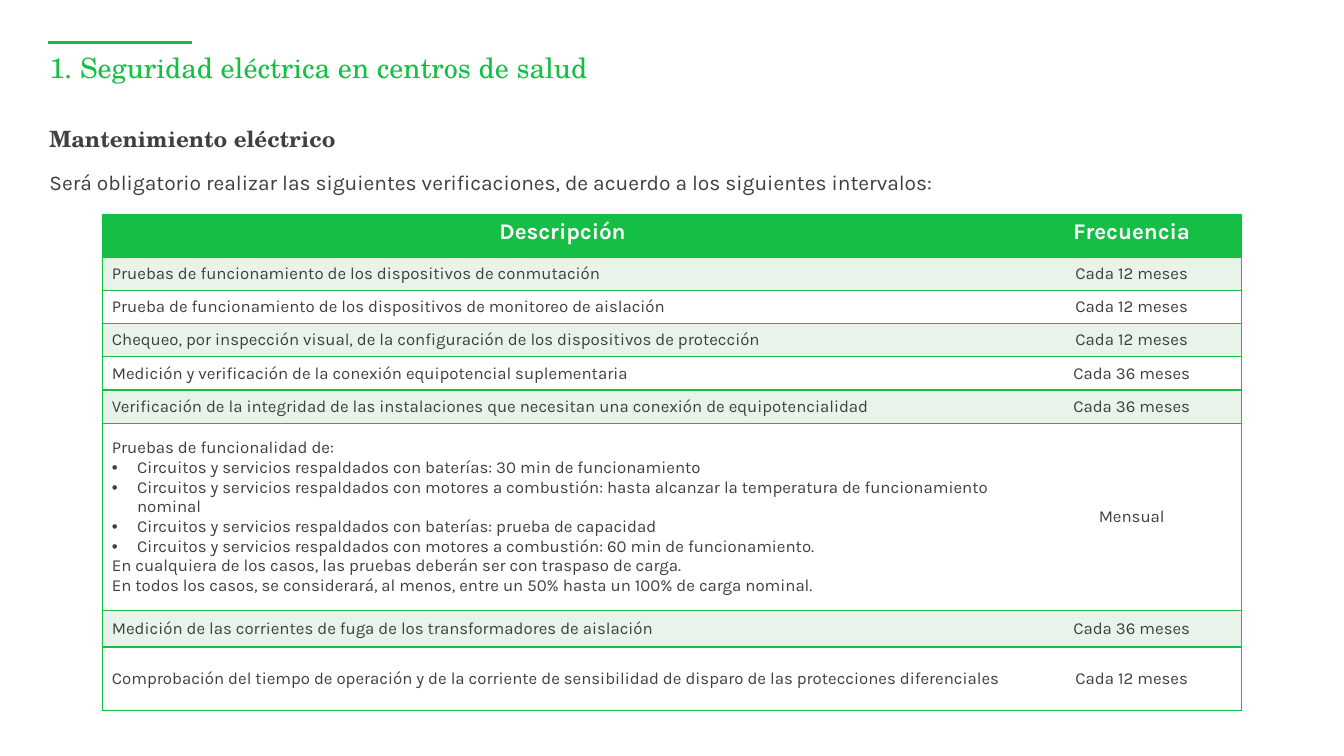
"""Build the slide on electrical maintenance checks and their intervals."""
from lxml.etree import SubElement as Sub
from pptx import Presentation
from pptx.dml.color import RGBColor as Rgb
from pptx.enum.shapes import MSO_CONNECTOR as Link
from pptx.enum.text import MSO_ANCHOR as Anchor, PP_ALIGN as Align
from pptx.oxml.ns import qn
from pptx.util import Inches, Pt

HUES = {"green": "15BF45", "dark": "404040", "text": "3F3F3F",
        "pale": "E8F4E9", "white": "FFFFFF"}
SERIF, SANS = "TeX Gyre Schola", "Karla"


def write(para, text, name, size, hue, bold=False):
    run = para.add_run()
    run.text = text
    for key, value in {"name": name, "size": Pt(size), "bold": bold}.items():
        setattr(run.font, key, value)
    run.font.color.rgb = Rgb.from_string(HUES[hue])


def edge(cell, side, shown):
    line = Sub(cell._tc.get_or_add_tcPr(), qn("a:ln" + side), w=str(Pt(1)))
    if shown:
        fill = Sub(line, qn("a:solidFill"))
        Sub(fill, qn("a:srgbClr"), val=HUES["green"])
    else:
        Sub(line, qn("a:noFill"))


deck = Presentation()
deck.slide_width, deck.slide_height = Inches(13.33), Inches(7.5)
slide = deck.slides.add_slide(deck.slide_layouts[6])

rule = slide.shapes.add_connector(
    Link.STRAIGHT, Inches(0.48), Inches(0.42), Inches(1.9), Inches(0.42))
rule.line.color.rgb = Rgb.from_string(HUES["green"])
rule.line.width = Pt(1.75)
Sub(rule._element.spPr, qn("a:effectLst"))

HEADS = [
    (0.54, 0.57, 0.9, "1. Seguridad eléctrica en centros de salud",
     SERIF, 20, "green", False),
    (1.27, 0.39, 0.9, "Mantenimiento eléctrico", SERIF, 16, "dark", True),
    (1.68, 0.39, 1.0, "Será obligatorio realizar las siguientes verificaciones, "
     "de acuerdo a los siguientes intervalos:", SANS, 15, "text", False),
]
for top, high, space, *words in HEADS:
    box = slide.shapes.add_textbox(
        Inches(0.49), Inches(top), Inches(10.79), Inches(high))
    frame = box.text_frame
    for key, value in {"word_wrap": True, "margin_left": 0, "margin_right": 0,
                       "margin_top": 0, "margin_bottom": 0}.items():
        setattr(frame, key, value)
    frame.paragraphs[0].line_spacing = space
    write(frame.paragraphs[0], *words)

TESTS = """Pruebas de funcionalidad de:
• Circuitos y servicios respaldados con baterías: 30 min de funcionamiento
• Circuitos y servicios respaldados con motores a combustión: hasta alcanzar la temperatura de funcionamiento nominal
• Circuitos y servicios respaldados con baterías: prueba de capacidad
• Circuitos y servicios respaldados con motores a combustión: 60 min de funcionamiento.
En cualquiera de los casos, las pruebas deberán ser con traspaso de carga.
En todos los casos, se considerará, al menos, entre un 50% hasta un 100% de carga nominal."""
ROWS = [
    (0.42, "Descripción", "Frecuencia"),
    (0.33, "Pruebas de funcionamiento de los dispositivos de conmutación",
     "Cada 12 meses"),
    (0.33, "Prueba de funcionamiento de los dispositivos de monitoreo de aislación",
     "Cada 12 meses"),
    (0.33, "Chequeo, por inspección visual, de la configuración de los "
     "dispositivos de protección", "Cada 12 meses"),
    (0.33, "Medición y verificación de la conexión equipotencial suplementaria",
     "Cada 36 meses"),
    (0.33, "Verificación de la integridad de las instalaciones que necesitan "
     "una conexión de equipotencialidad", "Cada 36 meses"),
    (1.86, TESTS, "Mensual"),
    (0.36, "Medición de las corrientes de fuga de los transformadores de aislación",
     "Cada 36 meses"),
    (0.63, "Comprobación del tiempo de operación y de la corriente de sensibilidad "
     "de disparo de las protecciones diferenciales", "Cada 12 meses"),
]
table = slide.shapes.add_table(len(ROWS), 2, Inches(1.02), Inches(2.13),
                               Inches(11.29), Inches(4.9)).table
for col, wide in zip(table.columns, (9.12, 2.17)):
    col.width = Inches(wide)

for r, (high, *texts) in enumerate(ROWS):
    table.rows[r].height = Inches(high)
    head = r == 0
    back = "green" if head else "pale" if r % 2 else "white"
    style = (16, "white", True) if head else (12, "text", False)
    for c, text in enumerate(texts):
        cell = table.cell(r, c)
        for key, value in {
                "margin_left": Inches(0.09), "margin_right": Inches(0.09),
                "margin_top": Inches(0.04), "margin_bottom": Inches(0.04),
                "vertical_anchor": Anchor.TOP if head else Anchor.MIDDLE}.items():
            setattr(cell, key, value)
        for side, shown in {"L": c == 0, "R": c == 1, "T": True, "B": True}.items():
            edge(cell, side, shown)
        cell.fill.solid()
        cell.fill.fore_color.rgb = Rgb.from_string(HUES[back])
        for n, line in enumerate(text.split("\n")):
            frame = cell.text_frame
            para = frame.add_paragraph() if n else frame.paragraphs[0]
            para.alignment = Align.CENTER if head or c else Align.LEFT
            if line.startswith("• "):
                props = para._p.get_or_add_pPr()
                props.set("marL", str(Inches(0.25)))
                props.set("indent", str(Inches(-0.25)))
                Sub(props, qn("a:buFont"), typeface="Arial")
                Sub(props, qn("a:buChar"), char="•")
            write(para, line.removeprefix("• "), SANS, *style)

deck.save("out.pptx")
